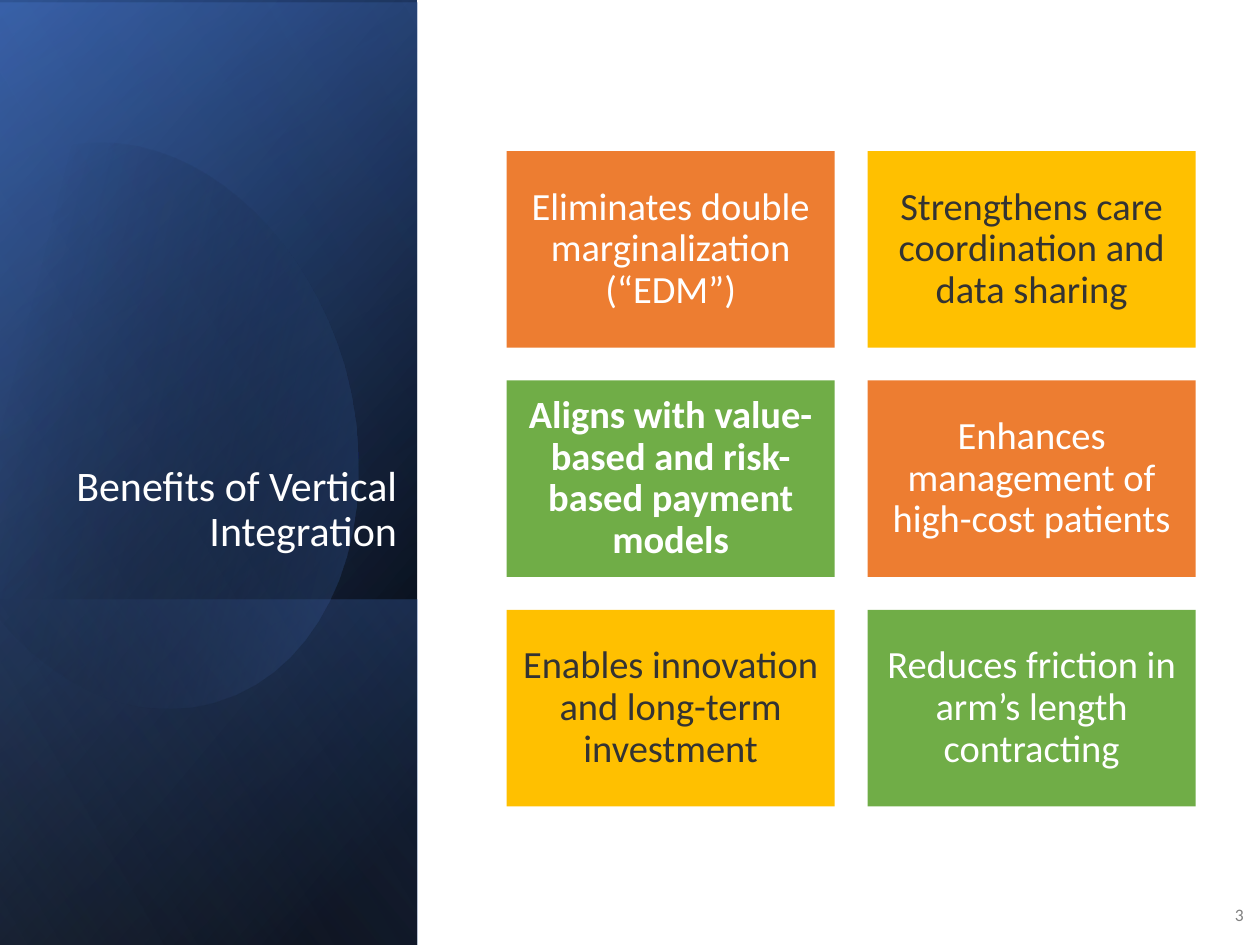
import math
from pptx import Presentation
from pptx import util as u
from pptx.dml.color import RGBColor
from pptx.enum import shapes, text
from pptx.oxml import parse_xml
from pptx.oxml.ns import nsdecls, qn

FONT = "Calibri"
WHITE, DARK, GREY = "FFFFFF", "333333", "808080"
RED, GOLD, GREEN = "ED7D31", "FFC000", "70AD47"
BLACK, BLUE = "000000", "4472C4"
CARDS = [
    ("Eliminates double marginalization (“EDM”)", RED, WHITE, False),
    ("Strengthens care coordination and data sharing", GOLD, DARK, False),
    ("Aligns with value-based and risk-based payment models", GREEN, WHITE, True),
    ("Enhances management of high-cost patients", RED, WHITE, False),
    ("Enables innovation and long-term investment", GOLD, DARK, False),
    ("Reduces friction in arm’s length contracting", GREEN, WHITE, False),
]
START = (96, 114)
CURVES = [
    [(171, 122), (244, 192), (273, 290)],
    [(307, 412), (262, 531), (171, 557)],
    [(114, 574), (53, 550), (7, 500)],
    [(-3, 488)],
    [(-25, 166)],
    [(-15, 154)],
    [(2, 137), (22, 125), (45, 118)],
    [(62, 113), (79, 112), START],
]


def px(n):
    return round(n * 9144)


def tint(code):
    return RGBColor.from_string(code)


def shade(shape, stops, angle):
    shape.shadow.inherit = False
    shape.line.fill.background()
    shape.fill.gradient()
    shape.fill.gradient_angle = 360 - angle
    for stop, (place, code, _) in zip(shape.fill.gradient_stops, stops):
        stop.position = place / 100
        stop.color.rgb = tint(code)
    marks = shape._element.spPr.iter(qn("a:srgbClr"))
    for mark, (_, _, alpha) in zip(marks, stops):
        if alpha < 100:
            mark.append(parse_xml(f'<a:alpha {nsdecls("a")} val="{alpha * 1000}"/>'))


def layer(slide, box, stops, angle):
    x, y, w, h = box
    shape = slide.shapes.add_shape(
        shapes.MSO_SHAPE.RECTANGLE,
        px(x + (w - h) / 2), px(y + (h - w) / 2), px(h), px(w))
    shape.rotation = 90
    shape._element.spPr.find(qn("a:xfrm")).set("flipH", "1")
    shade(shape, stops, angle)


def trace(steps=16):
    dots = [START]
    for curve in CURVES:
        if len(curve) == 1:
            dots += curve
            continue
        knots = [dots[-1]] + curve
        for i in range(1, steps + 1):
            t = i / steps
            mix = [math.comb(3, k) * t ** k * (1 - t) ** (3 - k) for k in range(4)]
            dots.append(tuple(sum(m * p[a] for m, p in zip(mix, knots)) for a in (0, 1)))
    return dots


def blob(slide, x, y, turn):
    mid_x, mid_y = 119, 334.5
    cos, sin = math.cos(math.radians(-turn)), math.sin(math.radians(-turn))
    dots = []
    for dot_x, dot_y in trace():
        dx, dy = dot_x - mid_x, dot_y - mid_y
        dots.append((px(x + mid_x + dx * cos - dy * sin),
                     px(y + mid_y + dx * sin + dy * cos)))
    pen = slide.shapes.build_freeform(*dots[0], scale=1.0)
    pen.add_line_segments(dots[1:], close=True)
    shape = pen.convert_to_shape()
    shape.rotation = turn
    shade(shape, [(29, BLACK, 0), (100, BLUE, 43)], 30)


def write(shape, words, size, code, align, anchor, bold=False, lead=1.0):
    frame = shape.text_frame
    frame.word_wrap = True
    frame.vertical_anchor = anchor
    para = frame.paragraphs[0]
    para.alignment = align
    para.line_spacing = lead
    run = para.add_run()
    run.text = words
    font = run.font
    font.name, font.size, font.bold = FONT, u.Pt(size), bold
    font.color.rgb = tint(code)
    return frame


def panel(slide, box):
    x, y, w, h = box
    layer(slide, box, [(8, BLACK, 100), (100, "2F5597", 100)], 50)
    layer(slide, (x, y + 2, w, h), [(0, BLACK, 0), (99, BLUE, 46)], 30)
    layer(slide, (x, y + 476, w, 274), [(2, BLUE, 29), (100, BLACK, 30)], 130)
    blob(slide, x, y, 343.9)
    layer(slide, box, [(0, BLACK, 0), (99, "8FAADC", 11)], 120)
    title = slide.shapes.add_textbox(px(x + 26), px(y + 184), px(299), px(262))
    write(title, "Benefits of Vertical Integration", 24, WHITE,
          text.PP_ALIGN.RIGHT, text.MSO_ANCHOR.BOTTOM, lead=0.9)


def grid(slide, box, cols=2, gap=26):
    x, y, w, h = box
    rows = len(CARDS) // cols
    wide = (w - gap * (cols - 1)) / cols
    high = (h - gap * (rows - 1)) / rows
    for i, (words, fill, ink, bold) in enumerate(CARDS):
        row, col = divmod(i, cols)
        card = slide.shapes.add_shape(
            shapes.MSO_SHAPE.RECTANGLE,
            px(x + col * (wide + gap)), px(y + row * (high + gap)),
            px(wide), px(high))
        card.shadow.inherit = False
        card.fill.solid()
        card.fill.fore_color.rgb = tint(fill)
        card.line.fill.background()
        frame = write(card, words, 22, ink, text.PP_ALIGN.CENTER,
                      text.MSO_ANCHOR.MIDDLE, bold, 0.9)
        frame.margin_left = frame.margin_right = px(9)
        frame.margin_top = frame.margin_bottom = px(9)


def folio(slide, box):
    note = slide.shapes.add_textbox(*map(px, box))
    write(note, "3", 10, GREY, text.PP_ALIGN.RIGHT, text.MSO_ANCHOR.MIDDLE)


def main():
    deck = Presentation()
    deck.slide_width, deck.slide_height = px(1000), px(750)
    slide = deck.slides.add_slide(deck.slide_layouts[6])
    panel(slide, (0, 0, 331, 750))
    folio(slide, (960, 706, 37, 40))
    grid(slide, (402, 120, 547, 520))
    deck.save("out.pptx")


if __name__ == "__main__":
    main()
